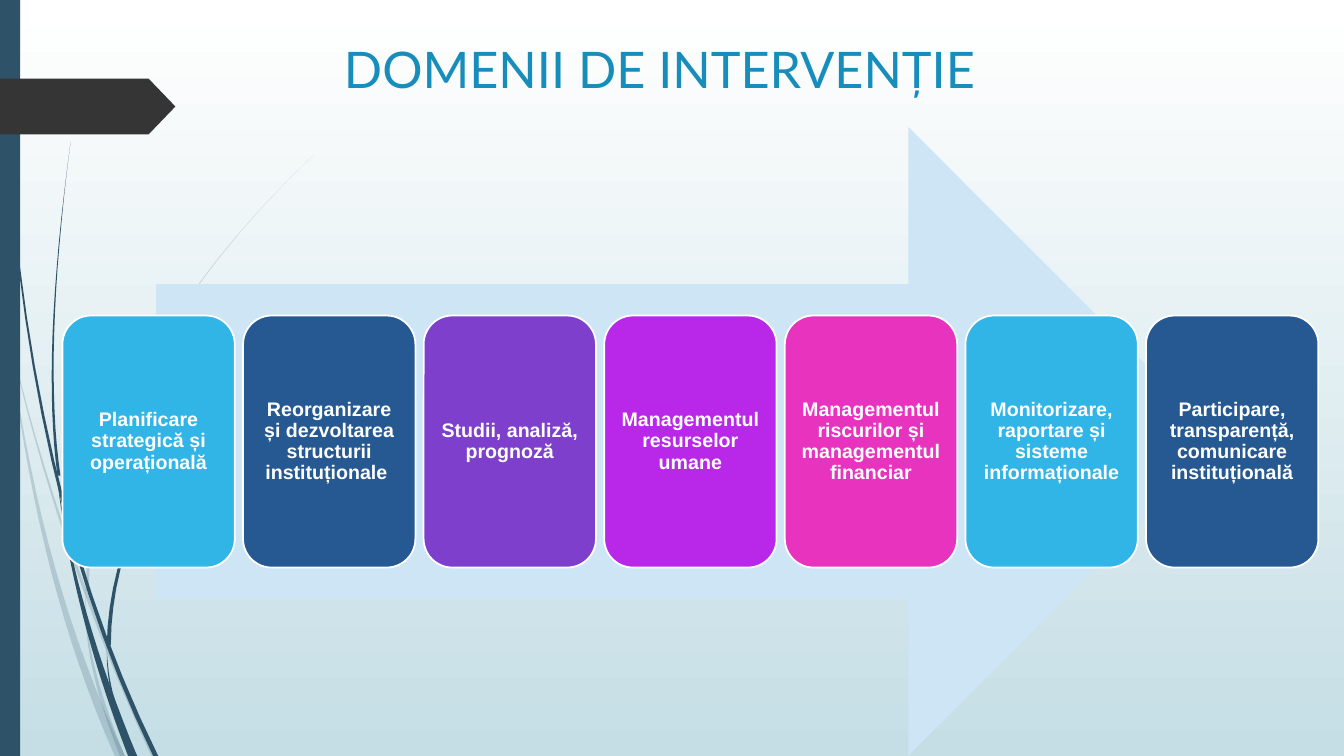
from typing import NamedTuple

from lxml.etree import SubElement
from pptx import Presentation
from pptx.dml.color import RGBColor
from pptx.enum.shapes import MSO_SHAPE
from pptx.enum.text import MSO_ANCHOR, PP_ALIGN
from pptx.oxml.ns import qn
from pptx.shapes.autoshape import Shape
from pptx.slide import Slide
from pptx.util import Pt

WHITE = RGBColor(0xFF, 0xFF, 0xFF)
MIST = RGBColor(0xC5, 0xDE, 0xE5)
SLATE = RGBColor(0x2E, 0x53, 0x69)
COAL = RGBColor(0x35, 0x35, 0x35)
TEAL = RGBColor(0x17, 0x8D, 0xBB)
PALE = RGBColor(0xCE, 0xE5, 0xF5)
SKY = RGBColor(0x31, 0xB4, 0xE6)
NAVY = RGBColor(0x26, 0x59, 0x91)
VIOLET = RGBColor(0x7E, 0x40, 0xCC)
PURPLE = RGBColor(0xB9, 0x27, 0xE9)
PINK = RGBColor(0xE8, 0x33, 0xBF)

GRID = Pt(0.72)
STEPS = 16
CARD_LEFT, CARD_TOP, CARD_STEP = 44.6, 225.4, 129
CARD_WIDTH, CARD_HEIGHT = 123.1, 180

Point = tuple[float, float]


class Box(NamedTuple):
    left: float
    top: float
    width: float
    height: float


class Card(NamedTuple):
    text: str
    color: RGBColor


class Blade(NamedTuple):
    tip: Point
    bend: Point
    base: Point
    width: float
    alpha: int = 100


CARDS = [
    Card("Planificare strategică și operațională", SKY),
    Card("Reorganizare și dezvoltarea structurii instituționale ", NAVY),
    Card("Studii, analiză, prognoză", VIOLET),
    Card("Managementul resurselor umane", PURPLE),
    Card("Managementul riscurilor și managementul financiar", PINK),
    Card("Monitorizare, raportare și sisteme informaționale", SKY),
    Card("Participare, transparență, comunicare instituțională", NAVY),
]

BLADES = [
    Blade((0, 290), (45, 520), (150, 750), 5, 20),
    Blade((11, 350), (38, 580), (114, 750), 10, 20),
    Blade((312, 153), (88, 365), (85, 586), 3, 20),
    Blade((85, 586), (80, 652), (119, 750), 5, 20),
    Blade((3, 0), (5, 447), (152, 750), 5),
    Blade((57, 477), (72, 607), (127, 750), 9),
    Blade((70, 141), (41, 354), (57, 472), 3),
    Blade((261, 344), (108, 490), (106, 640), 4),
    Blade((106, 640), (104, 692), (132, 750), 4),
]


def paint(shape: Shape, color: RGBColor) -> None:
    shape.shadow.inherit = False
    shape.fill.solid()
    shape.fill.fore_color.rgb = color
    shape.line.fill.background()


def add_form(slide: Slide, kind: MSO_SHAPE, box: Box, color: RGBColor) -> Shape:
    shape = slide.shapes.add_shape(kind, *map(Pt, box))
    paint(shape, color)
    return shape


def trace(blade: Blade) -> list[Point]:
    points = []
    for step in range(STEPS + 1):
        t = step / STEPS
        x, y = (
            (1 - t) ** 2 * a + 2 * t * (1 - t) * b + t * t * c
            for a, b, c in zip(blade.tip, blade.bend, blade.base)
        )
        points.append((x, y))
    return points


def add_blade(slide: Slide, blade: Blade) -> None:
    left = trace(blade)
    right = [
        (x + blade.width * step / STEPS, y) for step, (x, y) in enumerate(left)
    ]
    outline = [(x * 10, y * 10) for x, y in left + right[:0:-1]]
    pen = slide.shapes.build_freeform(*outline[0], scale=GRID / 10)
    pen.add_line_segments(outline[1:], close=True)
    shape = pen.convert_to_shape()
    paint(shape, SLATE)
    if blade.alpha < 100:
        tint = shape.element.spPr.find(".//" + qn("a:srgbClr"))
        SubElement(tint, qn("a:alpha"), val=str(blade.alpha * 1000))


def add_title(slide: Slide) -> None:
    box = Box(36.7, 23.8, 869, 90)
    frame = slide.shapes.add_textbox(*map(Pt, box)).text_frame
    frame.word_wrap = True
    line = frame.paragraphs[0]
    line.text = "DOMENII DE INTERVENȚIE"
    line.alignment = PP_ALIGN.CENTER
    line.font.name = "Lato"
    line.font.size = Pt(36)
    line.font.color.rgb = TEAL


def add_card(slide: Slide, card: Card, left: float) -> None:
    box = Box(left, CARD_TOP, CARD_WIDTH, CARD_HEIGHT)
    shape = add_form(slide, MSO_SHAPE.ROUNDED_RECTANGLE, box, card.color)
    shape.line.color.rgb = WHITE
    shape.line.width = Pt(1.25)
    frame = shape.text_frame
    frame.word_wrap = True
    frame.vertical_anchor = MSO_ANCHOR.MIDDLE
    frame.margin_left = frame.margin_right = Pt(4.2)
    frame.margin_top = frame.margin_bottom = Pt(4.2)
    line = frame.paragraphs[0]
    line.text = card.text
    line.alignment = PP_ALIGN.CENTER
    line.line_spacing = 0.9
    line.font.name = "Arial"
    line.font.size = Pt(14)
    line.font.bold = True
    line.font.color.rgb = WHITE


def main() -> None:
    deck = Presentation()
    deck.slide_width, deck.slide_height = Pt(960), Pt(540)
    slide = deck.slides.add_slide(deck.slide_layouts[6])
    fill = slide.background.fill
    fill.gradient()
    fill.gradient_angle = 270
    for stop, color in zip(fill.gradient_stops, (WHITE, MIST)):
        stop.color.rgb = color

    for blade in BLADES:
        add_blade(slide, blade)
    add_form(slide, MSO_SHAPE.RECTANGLE, Box(0, 0, 14.4, 540), SLATE)
    tag = add_form(slide, MSO_SHAPE.PENTAGON, Box(0, 56.2, 125.3, 39.8), COAL)
    tag.adjustments[0] = 0.48
    add_title(slide)
    add_form(slide, MSO_SHAPE.RIGHT_ARROW, Box(111.6, 90.7, 761.8, 449.3), PALE)
    for index, card in enumerate(CARDS):
        add_card(slide, card, CARD_LEFT + index * CARD_STEP)
    deck.save("out.pptx")


if __name__ == "__main__":
    main()
